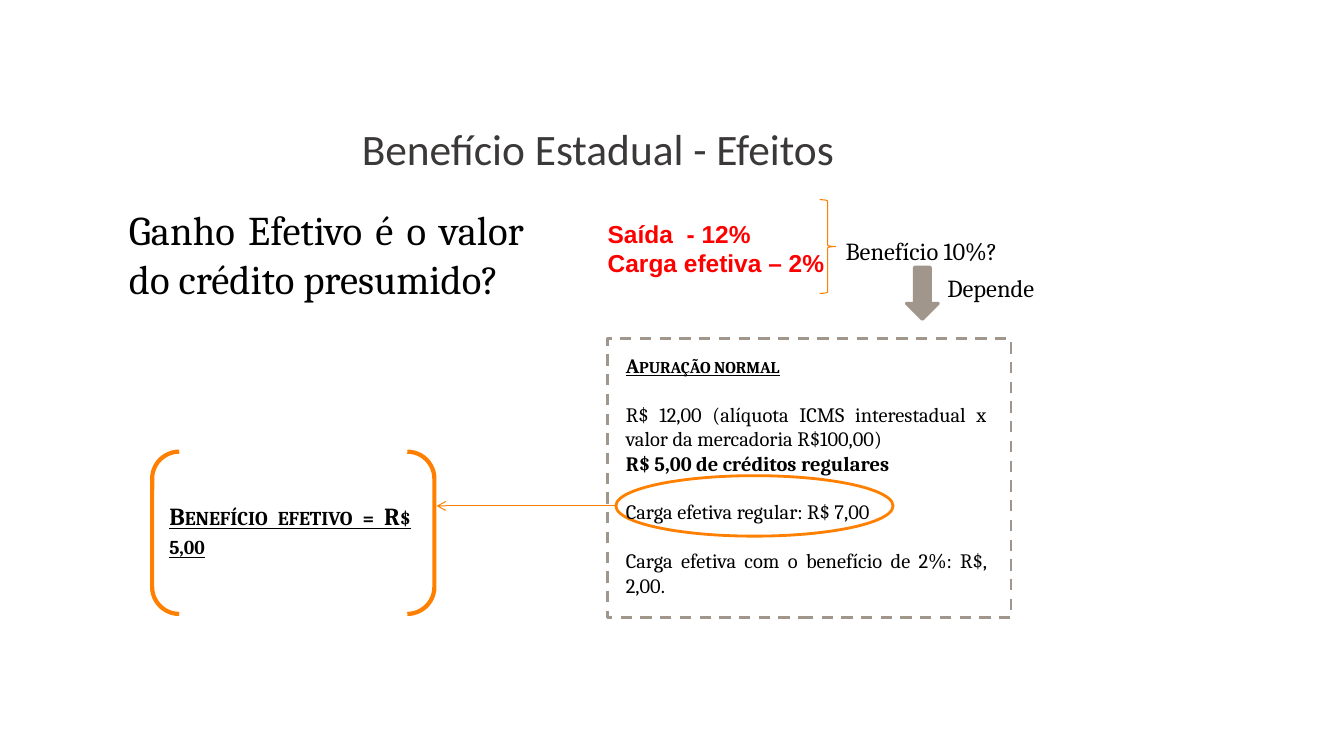
"""Build the slide on the effects of a state tax benefit."""
from lxml import etree
from pptx import Presentation
from pptx.dml.color import RGBColor
from pptx.enum.dml import MSO_LINE
from pptx.enum.shapes import MSO_CONNECTOR, MSO_SHAPE
from pptx.enum.text import MSO_ANCHOR, PP_ALIGN
from pptx.oxml.ns import qn
from pptx.util import Pt

CENTER, JUSTIFY, LEFT = PP_ALIGN.CENTER, PP_ALIGN.JUSTIFY, PP_ALIGN.LEFT
BOTTOM = MSO_ANCHOR.BOTTOM
DASH = MSO_LINE.DASH
STRAIGHT = MSO_CONNECTOR.STRAIGHT
RECTANGLE, ELLIPSE = MSO_SHAPE.RECTANGLE, MSO_SHAPE.OVAL
BRACE, BRACKETS = MSO_SHAPE.RIGHT_BRACE, MSO_SHAPE.DOUBLE_BRACKET
ARROW = MSO_SHAPE.RIGHT_ARROW
ORANGE, TAUPE, BLACK, RED = "FF8000", "A0968C", "000000", "FF0000"
TITLE_ONLY = 5
BLANK_LINE = 17.4


def color(hex_string):
    """Return the colour for a hex string."""
    return RGBColor.from_string(hex_string)


def add_span(para, text, size, font, hex_string, bold=False, heading=False):
    """Add one formatted run; a heading is underlined in small capitals."""
    span = para.add_run()
    span.text = text
    span.font.size = Pt(size)
    span.font.name = font
    span.font.bold = bold
    span.font.color.rgb = color(hex_string)
    if heading:
        span.font.underline = True
        span.font._element.set("cap", "small")


deck = Presentation()
deck.slide_width, deck.slide_height = Pt(960), Pt(540)
page = deck.slides.add_slide(deck.slide_layouts[TITLE_ONLY])

title = page.shapes.title
title.left, title.top, title.width, title.height = Pt(130.3), Pt(52.6), Pt(593.3), Pt(75.6)
title.fill.solid()
title.fill.fore_color.rgb = color("FFFFFF")
white = title._element.spPr.find(qn("a:solidFill"))[0]
etree.SubElement(white, qn("a:alpha"), val="47000")
title.text_frame.word_wrap = True
title.text_frame.vertical_anchor = BOTTOM
para = title.text_frame.paragraphs[0]
para.alignment = CENTER
para.line_spacing = 0.9
add_span(para, "Benefício Estadual - Efeitos", 31, "Calibri", "3B3838")

outlines = [
    (BRACE, 585.4, 142.6, 11.5, 67, ORANGE, 0.75),
    (ARROW, 640.1, 198, 37.4, 23, TAUPE, 2),
    (RECTANGLE, 434.2, 241.9, 288, 199.4, TAUPE, 2),
    (ELLIPSE, 439.9, 339.8, 198, 43.2, ORANGE, 2),
    (BRACKETS, 108.7, 322.6, 201.6, 115.9, ORANGE, 3),
]
for kind, left, top, width, height, hue, weight in outlines:
    shape = page.shapes.add_shape(kind, Pt(left), Pt(top), Pt(width), Pt(height))
    shape.shadow.inherit = False
    shape.line.color.rgb = color(hue)
    shape.line.width = Pt(weight)
    if kind == ARROW:
        shape.rotation = 90
        shape.fill.solid()
        shape.fill.fore_color.rgb = color(hue)
    else:
        shape.fill.background()
    if kind == RECTANGLE:
        shape.line.dash_style = DASH

link = page.shapes.add_connector(STRAIGHT, Pt(439.9), Pt(361.4), Pt(311.8), Pt(361.4))
link.line.color.rgb = color(ORANGE)
link.line.width = Pt(0.75)
etree.SubElement(link.line._get_or_add_ln(), qn("a:tailEnd"), type="arrow")
etree.SubElement(link._element.spPr, qn("a:effectLst"))

# Each line: text, bold, heading, space before
texts = [
    (85, 142.6, 296.6, 113, JUSTIFY, 29.1, "Cambria", BLACK,
     [("Ganho Efetivo é o valor do crédito presumido?", False, False, 0)]),
    (427, 152.6, 273.6, 92.2, LEFT, 17.5, "Arial", RED,
     [("Saída  - 12%", True, False, 0), ("Carga efetiva – 2%", True, False, 0)]),
    (596.9, 164.9, 145.4, 28.1, LEFT, 17.5, "Cambria", BLACK,
     [("Benefício 10%?", False, False, 0)]),
    (669.6, 191.5, 85, 28.1, LEFT, 17.5, "Cambria", BLACK,
     [("Depende", False, False, 0)]),
    (439.9, 248.4, 272.2, 202.3, JUSTIFY, 14.6, "Cambria", BLACK,
     [("Apuração normal", True, True, 0),
      ("R$ 12,00 (alíquota ICMS interestadual x valor da mercadoria R$100,00)",
       False, False, BLANK_LINE),
      ("R$ 5,00 de créditos regulares", True, False, 0),
      ("Carga efetiva regular: R$ 7,00", False, False, BLANK_LINE),
      ("Carga efetiva com o benefício de 2%: R$, 2,00.", False, False, BLANK_LINE)]),
    (113.8, 354.2, 186.5, 49.7, JUSTIFY, 17.5, "Cambria", BLACK,
     [("Benefício efetivo = R$ 5,00", True, True, 0)]),
]
for left, top, width, height, align, size, font, hue, lines in texts:
    box = page.shapes.add_textbox(Pt(left), Pt(top), Pt(width), Pt(height))
    frame = box.text_frame
    frame.word_wrap = True
    for index, (text, bold, heading, gap) in enumerate(lines):
        para = frame.add_paragraph() if index else frame.paragraphs[0]
        para.alignment = align
        if gap:
            para.space_before = Pt(gap)
        add_span(para, text, size, font, hue, bold, heading)

deck.save("out.pptx")
